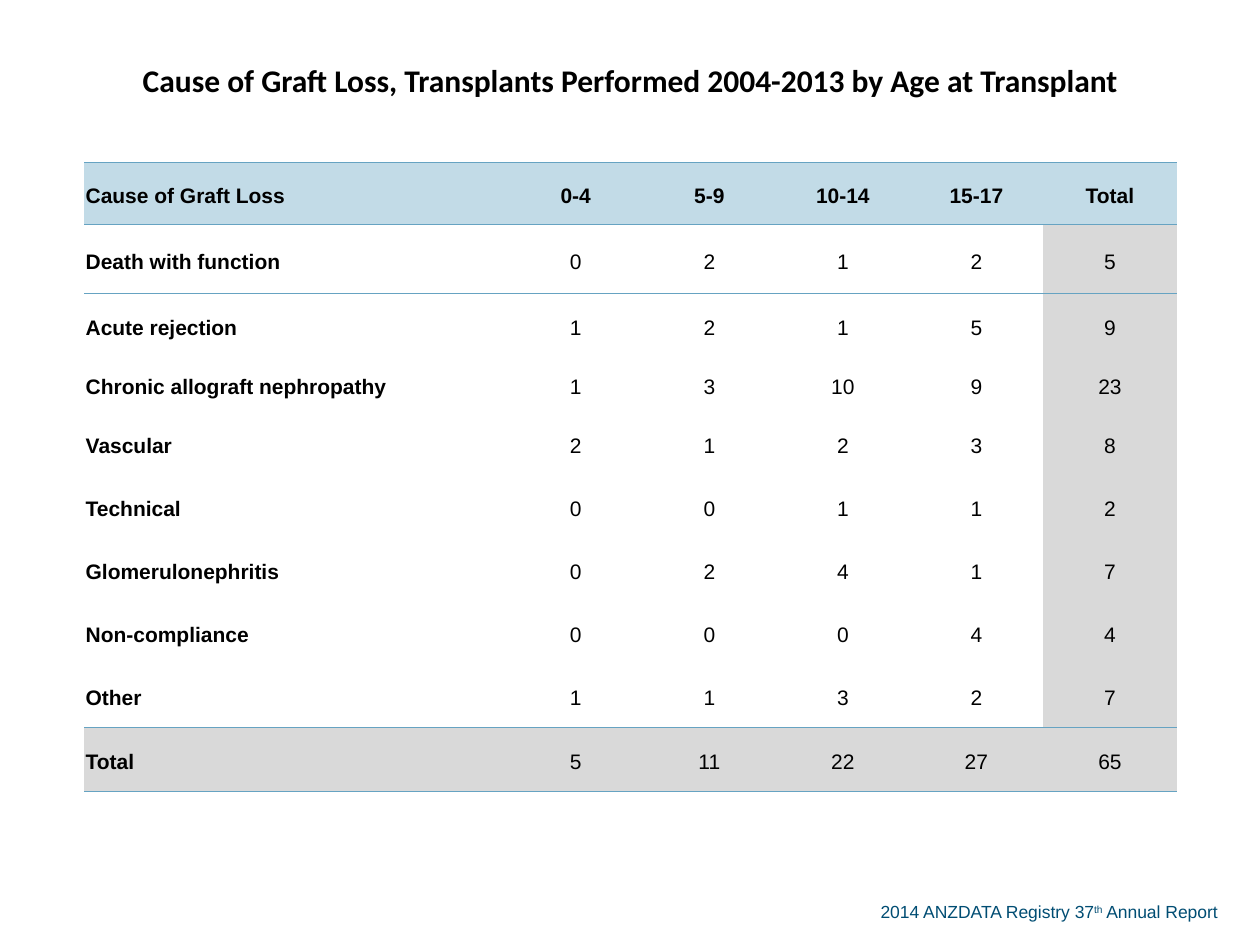
from lxml import etree
from pptx import Presentation
from pptx import util as u
from pptx.dml.color import RGBColor
from pptx.enum import text
from pptx.oxml.ns import qn

HEAD = ["Cause of Graft Loss", "0-4", "5-9", "10-14", "15-17", "Total"]
CAUSES = [
    ("Death with function", 0, 2, 1, 2, 5),
    ("Acute rejection", 1, 2, 1, 5, 9),
    ("Chronic allograft nephropathy", 1, 3, 10, 9, 23),
    ("Vascular", 2, 1, 2, 3, 8),
    ("Technical", 0, 0, 1, 1, 2),
    ("Glomerulonephritis", 0, 2, 4, 1, 7),
    ("Non-compliance", 0, 0, 0, 4, 4),
    ("Other", 1, 1, 3, 2, 7),
]
SUM = ("Total", 5, 11, 22, 27, 65)
TITLE = "Cause of Graft Loss, Transplants Performed 2004-2013 by Age at Transplant"
PLAIN = "{2D5ABB26-0587-4C30-8999-92F81FD0307C}"  # no style, no grid


def tint(code):
    return RGBColor.from_string(code)


class Deck:
    ink, blue, grey, rule, navy = "000000", "C2DBE7", "D9D9D9", "66A3C2", "004D73"

    def __init__(self, wide, high):
        self.file = Presentation()
        self.file.slide_width, self.file.slide_height = u.Inches(wide), u.Inches(high)
        self.page = self.file.slides.add_slide(self.file.slide_layouts[6])

    def across(self, share):
        return round(self.file.slide_width * share)

    def down(self, share):
        return round(self.file.slide_height * share)

    def run(self, para, words, size, face="Arial", color=ink, bold=False):
        run = para.add_run()
        run.text = words
        font = run.font
        font.size, font.name, font.bold = u.Pt(size), face, bold
        font.color.rgb = tint(color)
        return run

    def grid(self, left, top, cols, rows):
        frame = self.page.shapes.add_table(
            len(rows), len(cols), self.across(left), self.down(top),
            u.Inches(sum(cols)), u.Inches(sum(rows)))
        table = frame.table
        table.first_row = table.horz_banding = False
        table._tbl.tblPr.find(qn("a:tableStyleId")).text = PLAIN
        for col, size in zip(table.columns, cols):
            col.width = u.Inches(size)
        for row, size in zip(table.rows, rows):
            row.height = u.Inches(size)
        return table

    def cell(self, cell, fill=None, edges=""):
        cell.margin_left = cell.margin_right = cell.margin_top = u.Inches(0.01)
        cell.margin_bottom = 0
        cell.vertical_anchor = text.MSO_ANCHOR.MIDDLE
        if fill:
            cell.fill.solid()
            cell.fill.fore_color.rgb = tint(fill)
        else:
            cell.fill.background()
        # Borders come before the fill, top ahead of bottom
        for spot, edge in enumerate(edges):
            line = etree.Element(qn("a:ln" + edge), w=str(u.Pt(0.5)))
            paint = etree.SubElement(line, qn("a:solidFill"))
            etree.SubElement(paint, qn("a:srgbClr"), val=self.rule)
            cell._tc.get_or_add_tcPr().insert(spot, line)
        return cell.text_frame.paragraphs[0]

    def entry(self, cell, words, first, bold, fill, edges):
        para = self.cell(cell, fill, edges)
        para.alignment = text.PP_ALIGN.LEFT if first else text.PP_ALIGN.CENTER
        para.line_spacing, para.space_after = 1.19, u.Pt(14)
        self.run(para, str(words), 12, bold=bold)

    def note(self, left, top, wide, high, parts):
        box = self.page.shapes.add_textbox(
            self.across(left), self.down(top), self.across(wide), self.down(high))
        frame = box.text_frame
        frame.word_wrap = False
        frame.auto_size = text.MSO_AUTO_SIZE.SHAPE_TO_FIT_TEXT
        for words, lift in parts:
            run = self.run(frame.paragraphs[0], words, 10, color=self.navy)
            if lift:
                run.font._element.set("baseline", str(lift * 1000))


def main():
    deck = Deck(10, 7.5)

    # Source line
    deck.note(0.689, 0.947, 0.299, 0.036, [
        ("2014 ANZDATA Registry 37", 0), ("th", 30), (" Annual Report", 0)])

    # Table with its heading in a merged top row
    table = deck.grid(0.067, 0, [3.37] + [1.06] * 5,
                      [1.29, 0.49, 0.55, 0.5, 0.44] + [0.5] * 5 + [0.51])
    table.cell(0, 0).merge(table.cell(0, 5))
    for c in range(6):
        para = deck.cell(table.cell(0, c), edges="B")
        if c == 0:
            para.alignment = text.PP_ALIGN.CENTER
            deck.run(para, TITLE, 18, "Calibri", bold=True)

    # Header, causes and totals
    body = [HEAD, *CAUSES, SUM]
    last = len(body) - 1
    lines = {0: "TB", 1: "T", last - 1: "B", last: "TB"}
    for r, row in enumerate(body):
        for c, words in enumerate(row):
            fill = deck.blue if r == 0 else deck.grey if r == last or c == 5 else None
            deck.entry(table.cell(r + 1, c), words, c == 0, r == 0 or c == 0,
                       fill, lines.get(r, ""))

    deck.file.save("out.pptx")


if __name__ == "__main__":
    main()
